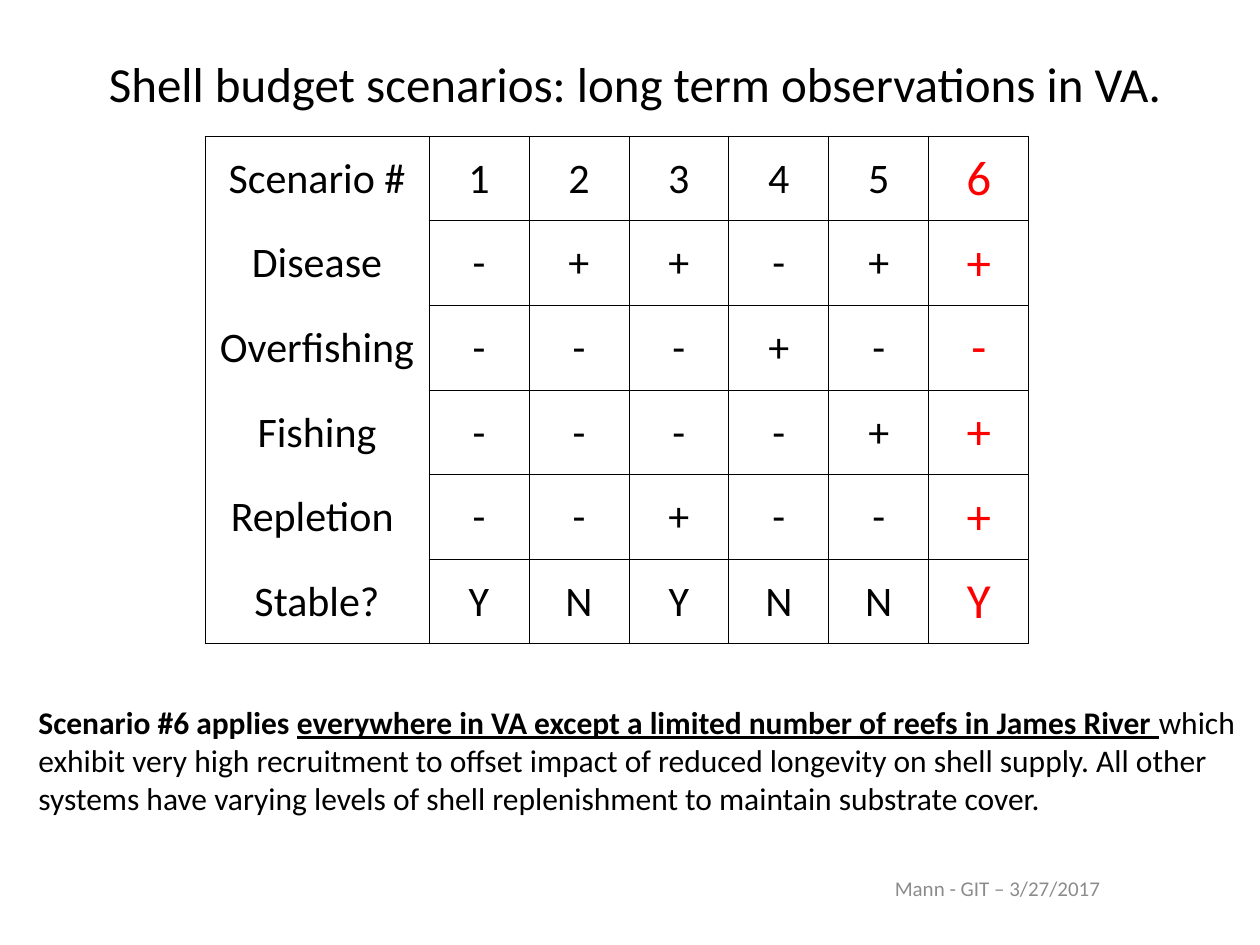
from lxml.etree import SubElement
from pptx import Presentation
from pptx.dml.color import RGBColor
from pptx.enum.text import MSO_ANCHOR, MSO_AUTO_SIZE, PP_ALIGN
from pptx.oxml.ns import qn
from pptx.util import Emu, Pt

BLACK = RGBColor(0x00, 0x00, 0x00)
RED = RGBColor(0xFF, 0x00, 0x00)
GRAY = RGBColor(0x8C, 0x8C, 0x8C)

SCENARIOS = [
    ["Scenario #", "1", "2", "3", "4", "5", "6"],
    ["Disease", "-", "+", "+", "-", "+", "+"],
    ["Overfishing", "-", "-", "-", "+", "-", "-"],
    ["Fishing", "-", "-", "-", "-", "+", "+"],
    ["Repletion ", "-", "-", "+", "-", "-", "+"],
    ["Stable?", "Y", "N", "Y", "N", "N", "Y"],
]
NOTE = [
    [
        ("Scenario #6 applies ", True, False),
        ("everywhere in VA except a limited number of reefs in James River ", True, True),
        ("which", False, False),
    ],
    [("exhibit very high recruitment to offset impact of reduced longevity on shell supply. All other", False, False)],
    [("systems have varying levels of shell replenishment to maintain substrate cover.", False, False)],
]


def px(n):
    return Emu(round(n * 914400 / 126))


class SlideBuilder:
    font = "Calibri"

    def __init__(self, prs):
        self.s = prs.slides.add_slide(prs.slide_layouts[5])

    def style(self, r, size, color=BLACK, bold=False, underline=False):
        r.font.name = self.font
        r.font.size = Pt(size)
        r.font.color.rgb = color
        r.font.bold = bold
        r.font.underline = underline

    def title(self, text, x, y, w, h):
        sp = self.s.shapes.title
        sp.left, sp.top, sp.width, sp.height = map(px, (x, y, w, h))
        tf = sp.text_frame
        tf.text = text
        tf.auto_size = MSO_AUTO_SIZE.NONE
        tf.vertical_anchor = MSO_ANCHOR.MIDDLE
        p = tf.paragraphs[0]
        p.alignment = PP_ALIGN.CENTER
        self.style(p.runs[0], 28)

    def border(self, cell, hidden):
        tcPr = cell._tc.get_or_add_tcPr()
        for side in "LRTB":
            ln = SubElement(tcPr, qn(f"a:ln{side}"), w=str(Pt(0.5)))
            if side in hidden:
                SubElement(ln, qn("a:noFill"))
            else:
                fill = SubElement(ln, qn("a:solidFill"))
                SubElement(fill, qn("a:srgbClr"), val=str(BLACK))

    def table(self, rows, x, y, w, h, label_w):
        n, m = len(rows), len(rows[0])
        tbl = self.s.shapes.add_table(n, m, px(x), px(y), px(w), px(h)).table
        tbl.first_row = tbl.horz_banding = False
        for j, col in enumerate(tbl.columns):
            col.width = px((w - label_w) / (m - 1) if j else label_w)
        for i, row in enumerate(rows):
            for j, text in enumerate(row):
                cell = tbl.cell(i, j)
                hidden = ""
                if j == 0:
                    hidden = ("T" if i > 0 else "") + ("B" if i < n - 1 else "")
                self.border(cell, hidden)
                cell.fill.background()
                cell.vertical_anchor = MSO_ANCHOR.MIDDLE
                cell.margin_left = cell.margin_right = cell.margin_top = px(1)
                cell.margin_bottom = 0
                cell.text_frame.text = text
                p = cell.text_frame.paragraphs[0]
                p.alignment = PP_ALIGN.CENTER
                size, color = (28, RED) if j == m - 1 else (24, BLACK)
                self.style(p.runs[0], size, color)

    def text(self, lines, x, y, w, h, size, color=BLACK, align=PP_ALIGN.LEFT, top=6, wrap=False):
        tf = self.s.shapes.add_textbox(*map(px, (x, y, w, h))).text_frame
        tf.word_wrap = wrap
        tf.margin_top = px(top)
        for i, line in enumerate(lines):
            p = tf.add_paragraph() if i else tf.paragraphs[0]
            p.alignment = align
            for text, bold, underline in line:
                r = p.add_run()
                r.text = text
                self.style(r, size, color, bold, underline)


def main():
    prs = Presentation()
    prs.slide_width, prs.slide_height = px(1260), px(945)
    b = SlideBuilder(prs)
    b.title("Shell budget scenarios: long term observations in VA.", 73, 28, 1124, 110)
    b.table(SCENARIOS, 205, 136, 824, 508, 224)
    b.text([[("Mann - GIT – 3/27/2017", False, False)]], 798, 876, 399, 50, 12, GRAY,
           PP_ALIGN.CENTER, top=0, wrap=True)
    b.text(NOTE, 26, 697, 1231, 127, 18)
    prs.save("out.pptx")


if __name__ == "__main__":
    main()
